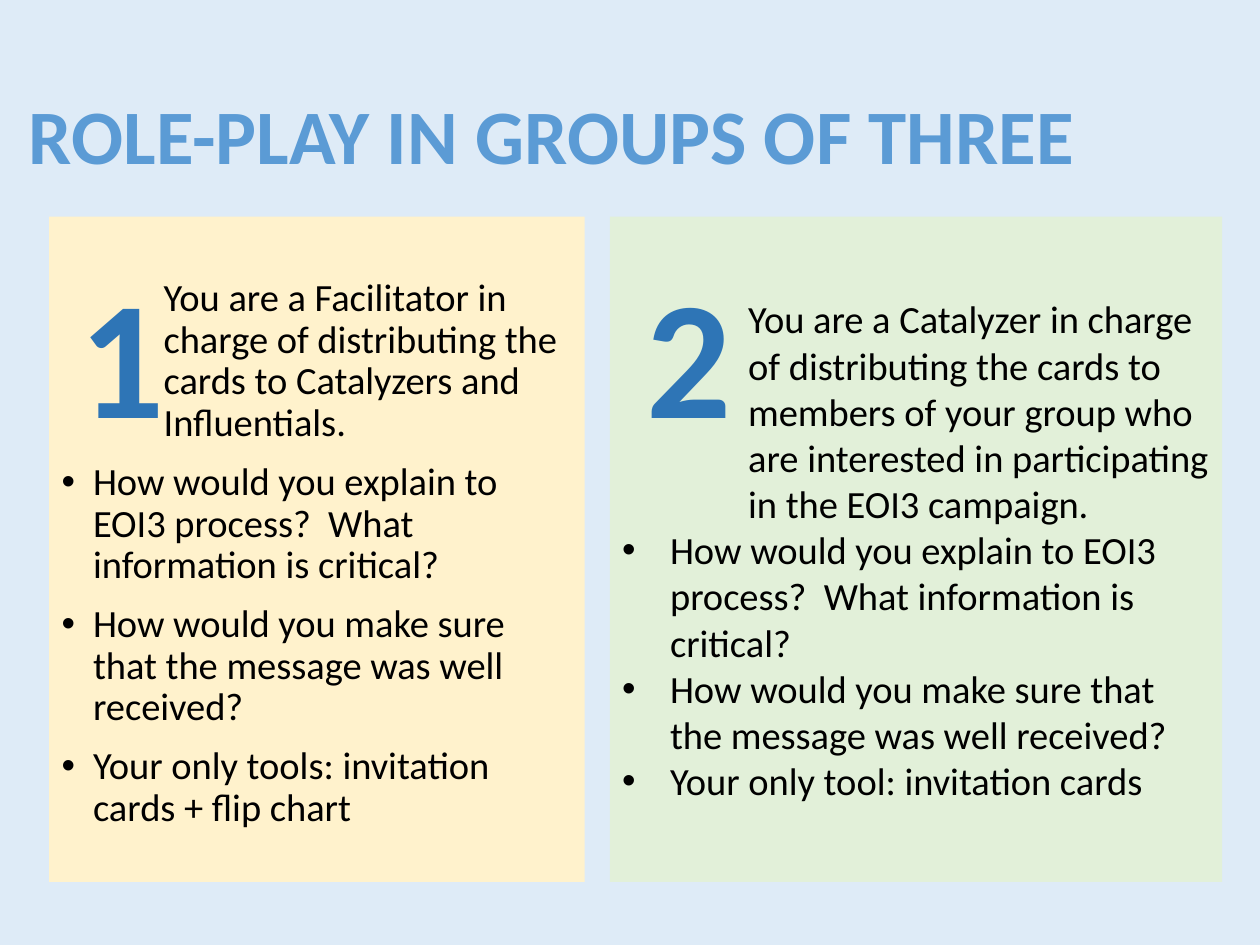
from lxml import etree
from pptx import Presentation
from pptx import util as u
from pptx.dml.color import RGBColor
from pptx.enum import shapes, text
from pptx.oxml.ns import qn

BACKGROUND = RGBColor(0xDE, 0xEB, 0xF7)
TITLE_BLUE = RGBColor(0x5B, 0x9B, 0xD5)
NUMBER_BLUE = RGBColor(0x2E, 0x75, 0xB6)
CREAM = RGBColor(0xFF, 0xF2, 0xCC)
GREEN = RGBColor(0xE2, 0xF0, 0xD9)
BLACK = RGBColor(0, 0, 0)

TITLE = "ROLE-PLAY IN GROUPS OF THREE"
EXPLAIN = "How would you explain to EOI3 process?  What information is critical?"
CHECK = "How would you make sure that the message was well received?"
CARDS = [
    dict(number="1", left=0.39, width=4.25, number_left=0.46, fill=CREAM,
         intro="You are a Facilitator in charge of distributing the cards to "
               "Catalyzers and Influentials.",
         bullets=[EXPLAIN, CHECK, "Your only tools: invitation cards + flip chart"],
         intro_indent=0.81, bullet_indent=0.25, anchor=text.MSO_ANCHOR.TOP, top_inset=0.49,
         spacing=dict(line_spacing=0.9, space_before=u.Pt(10))),
    dict(number="2", left=4.84, width=4.86, number_left=4.96, fill=GREEN,
         intro="You are a Catalyzer in charge of distributing the cards to members of "
               "your group who are interested in participating in the EOI3 campaign.",
         bullets=[EXPLAIN, CHECK, "Your only tool: invitation cards"],
         intro_indent=1, bullet_indent=0.38, anchor=text.MSO_ANCHOR.MIDDLE, top_inset=0.05,
         spacing=dict(line_spacing=1.0, space_before=u.Pt(0))),
]
CARD_TOP, CARD_HEIGHT = 1.72, 5.28
NUMBER_TOP, NUMBER_WIDTH, NUMBER_HEIGHT = 2.29, 0.92, 1


def apply(target, values):
    for name, value in values.items():
        setattr(target, name, value)


def write(paragraph, words, size, color, bold=False, align=text.PP_ALIGN.LEFT, **spacing):
    run = paragraph.add_run()
    run.text = words
    apply(run.font, dict(name="Calibri", size=u.Pt(size), bold=bold))
    run.font.color.rgb = color
    apply(paragraph, dict(alignment=align, **spacing))


def indent(paragraph, margin, bullet=False):
    properties = paragraph._p.get_or_add_pPr()
    properties.set("marL", str(u.Inches(margin)))
    properties.set("indent", str(u.Inches(-margin if bullet else 0)))
    if bullet:
        etree.SubElement(properties, qn("a:buFont")).set("typeface", "Arial")
        etree.SubElement(properties, qn("a:buChar")).set("char", "•")


def add_box(slide, kind, box, anchor, fill=None):
    shape = slide.shapes.add_shape(kind, *map(u.Inches, box))
    shape.shadow.inherit = False
    shape.line.fill.background()
    if fill is None:
        shape.fill.background()
    else:
        shape.fill.solid()
        shape.fill.fore_color.rgb = fill
    apply(shape.text_frame, dict(word_wrap=True, vertical_anchor=anchor))
    return shape


def add_card(slide, card):
    box = card["left"], CARD_TOP, card["width"], CARD_HEIGHT
    frame = add_box(slide, shapes.MSO_SHAPE.RECTANGLE, box, card["anchor"],
                    card["fill"]).text_frame
    frame.margin_top = u.Inches(card["top_inset"])
    intro = frame.paragraphs[0]
    write(intro, card["intro"], 22, BLACK, line_spacing=card["spacing"]["line_spacing"])
    indent(intro, card["intro_indent"])
    for words in card["bullets"]:
        paragraph = frame.add_paragraph()
        write(paragraph, words, 22, BLACK, **card["spacing"])
        indent(paragraph, card["bullet_indent"], bullet=True)


def add_number(slide, card):
    box = card["number_left"], NUMBER_TOP, NUMBER_WIDTH, NUMBER_HEIGHT
    shape = add_box(slide, shapes.MSO_SHAPE.ROUNDED_RECTANGLE, box, text.MSO_ANCHOR.MIDDLE)
    shape.adjustments[0] = 0.27
    write(shape.text_frame.paragraphs[0], card["number"], 96, NUMBER_BLUE,
          bold=True, align=text.PP_ALIGN.CENTER)


def main():
    presentation = Presentation()
    apply(presentation, dict(slide_width=u.Inches(10), slide_height=u.Inches(7.5)))
    slide = presentation.slides.add_slide(presentation.slide_layouts[5])
    slide.background.fill.solid()
    slide.background.fill.fore_color.rgb = BACKGROUND

    title = slide.shapes.title
    apply(title, dict(left=u.Inches(0.13), top=u.Inches(0.79),
                      width=u.Inches(10), height=u.Inches(0.7)))
    apply(title.text_frame, dict(word_wrap=True, vertical_anchor=text.MSO_ANCHOR.TOP,
                                 auto_size=text.MSO_AUTO_SIZE.SHAPE_TO_FIT_TEXT))
    write(title.text_frame.paragraphs[0], TITLE, 44, TITLE_BLUE, bold=True, line_spacing=0.8)

    for add in (add_card, add_number):
        for card in CARDS:
            add(slide, card)
    presentation.save("out.pptx")


if __name__ == "__main__":
    main()
